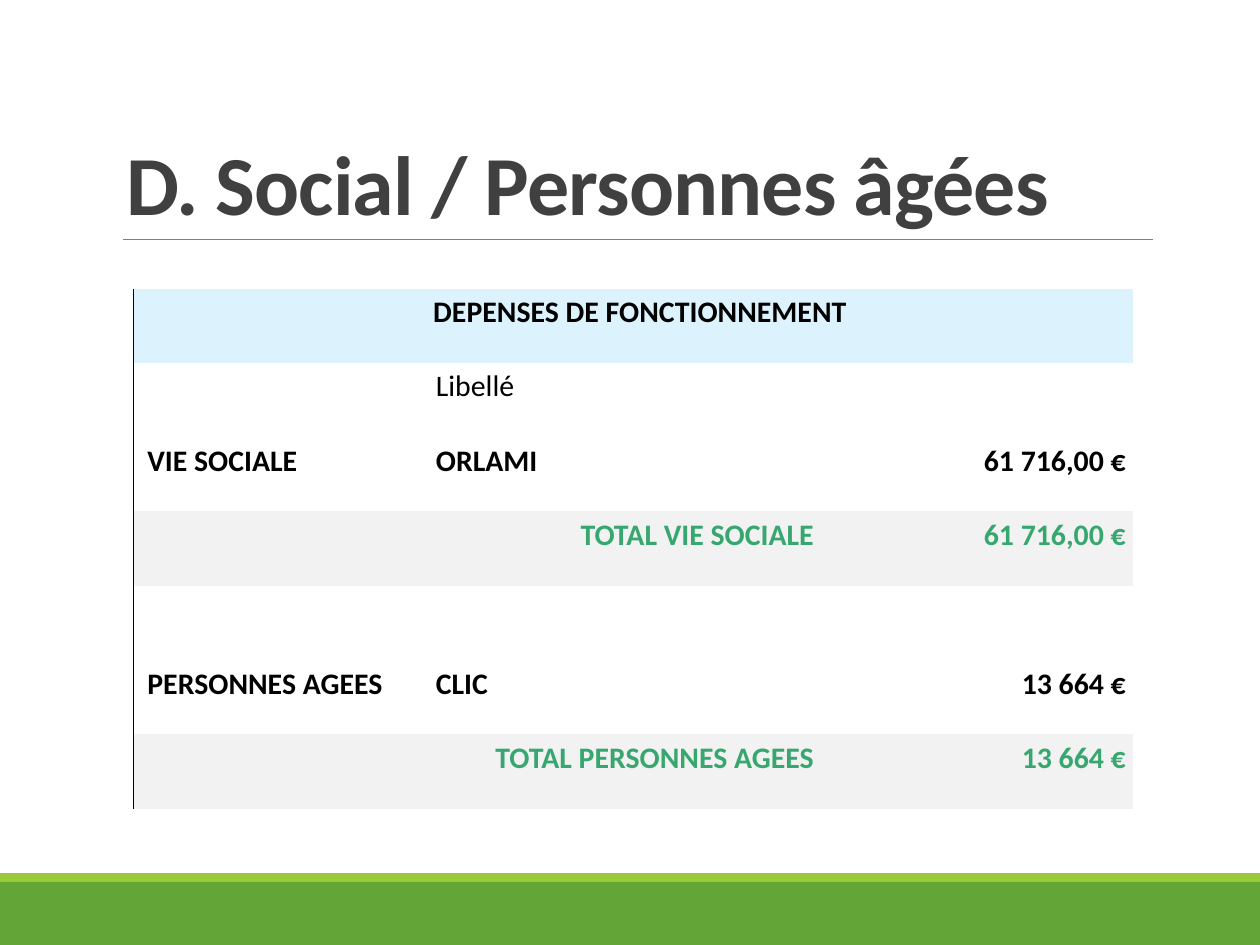
from dataclasses import dataclass
from typing import Optional

import pptx
import pptx.dml.color
import pptx.enum.shapes
import pptx.enum.text
import pptx.oxml
import pptx.oxml.ns
import pptx.util

Inches = pptx.util.Inches
Pt = pptx.util.Pt
RGBColor = pptx.dml.color.RGBColor
Align = pptx.enum.text.PP_ALIGN
Anchor = pptx.enum.text.MSO_ANCHOR

FONT = "Calibri"
BLACK = RGBColor(0x00, 0x00, 0x00)
TITLE_GREY = RGBColor(0x40, 0x40, 0x40)
RULE_GREY = RGBColor(0x80, 0x80, 0x80)
DARK_GREEN = RGBColor(0x63, 0xA5, 0x37)
LIGHT_GREEN = RGBColor(0x99, 0xCB, 0x38)
TOTAL_GREEN = RGBColor(0x37, 0xA7, 0x6F)
HEADER_BLUE = RGBColor(0xDC, 0xF3, 0xFE)
TOTAL_GREY = RGBColor(0xF2, 0xF2, 0xF2)

NO_STYLE = "{2D5ABB26-0587-4C30-8999-92F81FD0307C}"
COLUMN_WIDTHS = (2.29, 3.11, 2.53)
ROW_HEIGHT = 0.59


@dataclass
class BudgetRow:
    texts: tuple[str, str, str] = ("", "", "")
    alignments: tuple = (Align.LEFT, Align.LEFT, Align.RIGHT)
    color: RGBColor = BLACK
    bold: bool = True
    fill: Optional[RGBColor] = None
    span: int = 1
    border: float = 0.75


TOTAL = dict(alignments=(Align.RIGHT,) * 3, color=TOTAL_GREEN, fill=TOTAL_GREY)
ROWS = (
    BudgetRow(("DEPENSES DE FONCTIONNEMENT", "", ""), (Align.CENTER,) * 3,
              fill=HEADER_BLUE, span=3, border=1),
    BudgetRow(("", "Libellé", ""), bold=False, border=1),
    BudgetRow(("VIE SOCIALE", "ORLAMI", "61 716,00 € "), border=1),
    BudgetRow(("", "TOTAL VIE SOCIALE", "61 716,00 € "), **TOTAL),
    BudgetRow(),
    BudgetRow(("PERSONNES AGEES", "CLIC", "13 664 € ")),
    BudgetRow(("TOTAL PERSONNES AGEES", "", "13 664 € "), span=2, **TOTAL),
)


def write_text(text_frame, text: str, *, size: float, color: RGBColor,
               bold: bool = True, alignment=Align.LEFT):
    """Write one formatted paragraph and return it."""
    paragraph = text_frame.paragraphs[0]
    paragraph.alignment = alignment
    run = paragraph.add_run()
    run.text = text
    run.font.name = FONT
    run.font.size = Pt(size)
    run.font.bold = bold
    run.font.color.rgb = color
    return paragraph


def add_bar(slide, top: float, height: float, color: RGBColor) -> None:
    bar = slide.shapes.add_shape(pptx.enum.shapes.MSO_SHAPE.RECTANGLE,
                                 0, Inches(top), Inches(10), Inches(height))
    bar.shadow.inherit = False
    bar.fill.solid()
    bar.fill.fore_color.rgb = color
    bar.line.fill.background()


def add_rule(slide, left: float, right: float, top: float) -> None:
    rule = slide.shapes.add_connector(
        pptx.enum.shapes.MSO_CONNECTOR.STRAIGHT,
        Inches(left), Inches(top), Inches(right), Inches(top))
    rule.line.color.rgb = RULE_GREY
    rule.line.width = Pt(0.5)
    rule._element.spPr.append(pptx.oxml.parse_xml(
        f'<a:effectLst {pptx.oxml.ns.nsdecls("a")}/>'))


def set_title(slide, text: str) -> None:
    title = slide.shapes.title
    title.left, title.top = Inches(0.9), Inches(0.31)
    title.width, title.height = Inches(8.25), Inches(1.59)
    text_frame = title.text_frame
    text_frame.word_wrap = True
    text_frame.auto_size = pptx.enum.text.MSO_AUTO_SIZE.NONE
    text_frame.vertical_anchor = Anchor.BOTTOM
    paragraph = write_text(text_frame, text, size=48, color=TITLE_GREY)
    paragraph.line_spacing = 0.85
    paragraph.space_after = Pt(6)
    paragraph.runs[0].font._element.set("spc", "-50")


def set_left_border(cell, width: float) -> None:
    # Borders come before the fill in the cell properties
    cell._tc.get_or_add_tcPr().insert(0, pptx.oxml.parse_xml(
        f'<a:lnL {pptx.oxml.ns.nsdecls("a")} w="{Pt(width)}"><a:solidFill>'
        f'<a:srgbClr val="{BLACK}"/></a:solidFill></a:lnL>'))


def format_cell(cell, row: BudgetRow, column: int) -> None:
    cell.margin_left, cell.margin_top = Inches(0.11), Inches(0.03)
    cell.margin_right, cell.margin_bottom = Inches(0), Inches(0.24)
    cell.vertical_anchor = Anchor.MIDDLE
    if row.fill is None:
        cell.fill.background()
    else:
        cell.fill.solid()
        cell.fill.fore_color.rgb = row.fill
    if column == 0:
        set_left_border(cell, row.border)
    if row.texts[column]:
        write_text(cell.text_frame, row.texts[column], size=17, color=row.color,
                   bold=row.bold, alignment=row.alignments[column])


def add_budget_table(slide) -> None:
    frame = slide.shapes.add_table(
        len(ROWS), len(COLUMN_WIDTHS), Inches(1.06), Inches(2.29),
        Inches(sum(COLUMN_WIDTHS)), Inches(ROW_HEIGHT * len(ROWS)))
    table = frame.table
    table.first_row = table.horz_banding = False
    table._tbl.tblPr.find(pptx.oxml.ns.qn("a:tableStyleId")).text = NO_STYLE
    for column, width in zip(table.columns, COLUMN_WIDTHS):
        column.width = Inches(width)
    for index, row in enumerate(ROWS):
        table.rows[index].height = Inches(ROW_HEIGHT)
        if row.span > 1:
            table.cell(index, 0).merge(table.cell(index, row.span - 1))
        for column in range(len(COLUMN_WIDTHS)):
            format_cell(table.cell(index, column), row, column)


def main() -> None:
    presentation = pptx.Presentation()
    presentation.slide_width = Inches(10)
    presentation.slide_height = Inches(7.5)
    slide = presentation.slides.add_slide(presentation.slide_layouts[5])

    # Footer bars and title rule
    add_bar(slide, 7, 0.5, DARK_GREEN)
    add_bar(slide, 6.93, 0.07, LIGHT_GREEN)
    add_rule(slide, 0.98, 9.15, 1.9)

    # Title and budget
    set_title(slide, "D. Social / Personnes âgées")
    add_budget_table(slide)
    presentation.save("out.pptx")


if __name__ == "__main__":
    main()
